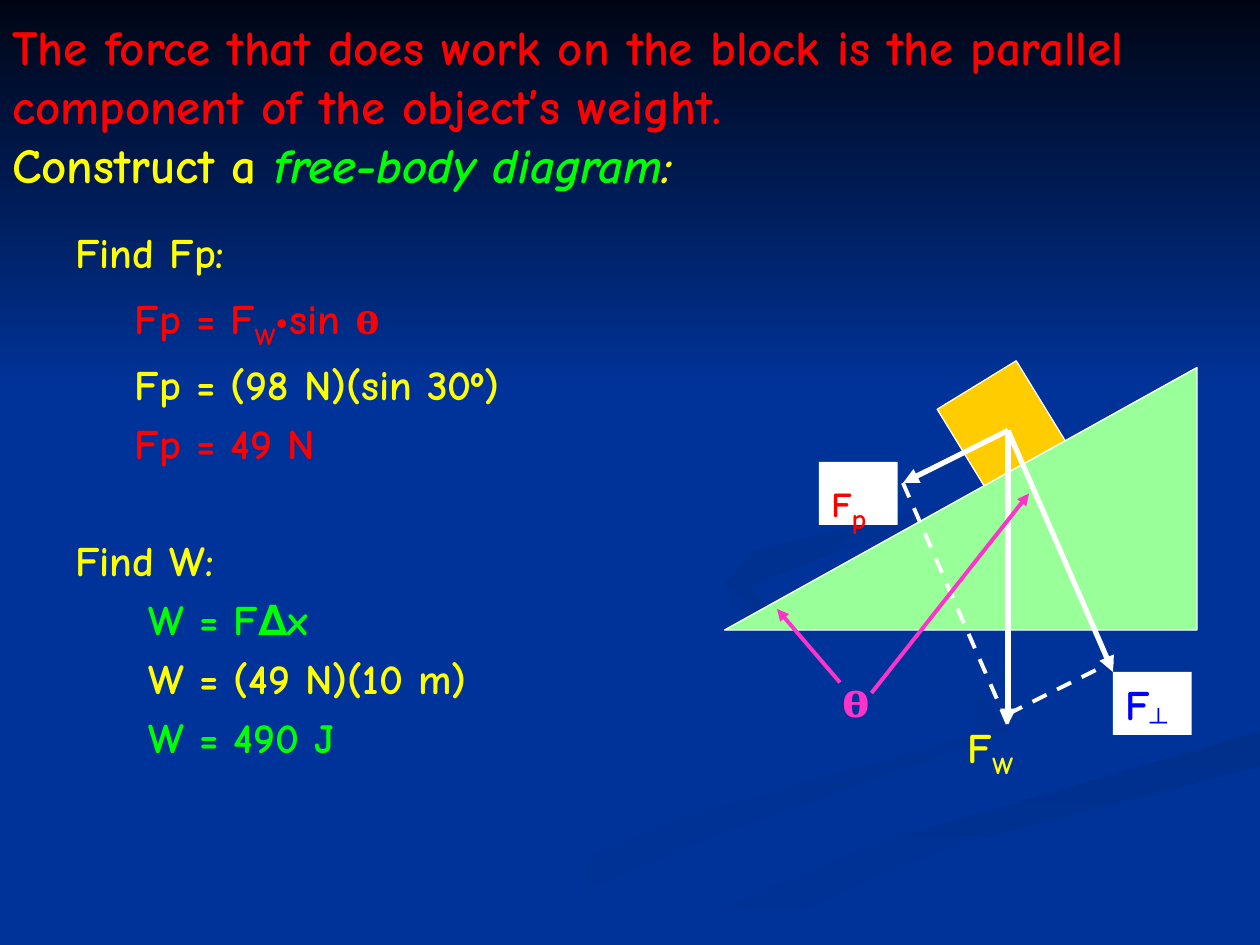
from lxml import etree
from pptx import Presentation
from pptx.dml.color import RGBColor
from pptx.enum.dml import MSO_LINE
from pptx.enum.shapes import MSO_CONNECTOR, MSO_SHAPE
from pptx.enum.text import MSO_ANCHOR
from pptx.oxml.ns import qn
from pptx.util import Pt

RECT, TRI = MSO_SHAPE.RECTANGLE, MSO_SHAPE.RIGHT_TRIANGLE
LINE, DASH = MSO_CONNECTOR.STRAIGHT, MSO_LINE.DASH
TOP, MID = MSO_ANCHOR.TOP, MSO_ANCHOR.MIDDLE
COMIC, TIMES, ARIAL = "Comic Neue", "Times New Roman", "Arial"
WIDE, HIGH = 720, 540

HEX = {
    "back": "003399", "night": "000514", "shade": "003193", "deep": "002F8C",
    "red": "FF0000", "yellow": "FFFF00", "green": "00FF00", "blue": "0000FF",
    "pink": "FF33CC", "white": "FFFFFF", "gold": "FFCC00", "mint": "99FF99",
}

SWIRLS = [
    ("back", "shade", 0, [
        (562, 398), (442, 357), (414, 330), (418, 348), (559, 398), (557, 420),
        (388, 467), (216, HIGH), (260, HIGH), (406, 479), (576, 418)]),
    ("deep", "back", 90, [
        (362, HIGH), (411, HIGH), (541, 484), (WIDE, 438), (WIDE, 418),
        (501, 482)]),
    ("deep", "back", 45, [
        (492, 310), (594, 289), (640, 261), (638, 228), (549, 168), (635, 225),
        (631, 259), (549, 287), (430, 315), (415, 333), (448, 360), (428, 335)]),
]

SUB, SLANT = {"sub": True}, {"i": True}
TITLE = [
    (0, 0, 28, [("The force that does work on the block is the parallel "
                 "component of the object’s weight.", "red")]),
    (0, 0, 28, [("Construct a ", "yellow"),
                ("free-body diagram", "green", SLANT), (":", "yellow", SLANT)]),
]
STEPS = [
    (0, "Find Fp:", 34, [
        [("Fp = F", "red"), ("W", "red", SUB), ("•sin ", "red"),
         ("ө", "red", {"font": TIMES, "size": 28})],
        [("Fp = (98 N)(sin 30º)", "yellow")],
        [("Fp = 49 N", "red")]]),
    (38.5, "Find W:", 42, [
        [("W = F∆x", "green")],
        [("W = (49 N)(10 m)", "yellow")],
        [("W = 490 J", "green")]]),
]
SOLIDS = [
    (RECT, (546, 216, 53, 55), 328.5, "gold"),
    (TRI, (474, 150, 150, 270), 270, "mint"),
]
HUB, SIDE, FOOT = (576, 246), (516, 276), (576, 414)
RAYS = [
    ("white", 3, False, [(HUB, FOOT), (HUB, (636, 384)), (HUB, SIDE)]),
    ("white", 2.25, True, [(SIDE, FOOT), ((576, 408), (636, 378))]),
    ("pink", 2.25, False, [((498, 396), (588, 282)), ((480, 390), (444, 348))]),
]
CARDS = [
    ((468, 264), 20, [("F", "red"), ("p", "red", {"sub": True, "size": 28})]),
    ((636, 384), 24, [("F", "blue"), ("┴", "blue", {"sub": True, "font": ARIAL})]),
]
TAGS = [
    ((546, 409, 46, 36), 24, [("F", "yellow"), ("W", "yellow", SUB)]),
    ((474, 374.5, 30, 45), 32, [("ө", "pink", {"font": TIMES})]),
]


def rgb(name):
    return RGBColor.from_string(HEX[name])


def write(frame, paras, wrap=True, anchor=TOP):
    frame.word_wrap = wrap
    frame.vertical_anchor = anchor
    for n, (indent, gap, size, runs) in enumerate(paras):
        para = frame.add_paragraph() if n else frame.paragraphs[0]
        para.space_before = Pt(gap)
        para.font.bold = True
        props = para._p.get_or_add_pPr()
        props.set("marL", str(Pt(indent)))
        props.set("algn", "l")
        for words, color, *more in runs:
            look = more[0] if more else {}
            run = para.add_run()
            run.text = words
            font = run.font
            font.name = look.get("font", COMIC)
            font.size = Pt(look.get("size", size))
            font.bold = True
            font.color.rgb = rgb(color)
            if look.get("i"):
                font.italic = True
            if look.get("sub"):
                run._r.get_or_add_rPr().set("baseline", "-25000")


def text(slide, box, paras, **opts):
    area = slide.shapes.add_textbox(*map(Pt, box))
    write(area.text_frame, paras, **opts)


def solid(slide, kind, box, color, turn=0, edge=False):
    shape = slide.shapes.add_shape(kind, *map(Pt, box))
    shape.shadow.inherit = False
    shape.rotation = turn
    shape.fill.solid()
    shape.fill.fore_color.rgb = rgb(color)
    if edge:
        shape.line.color.rgb = rgb("white")
        shape.line.width = Pt(0.75)
    else:
        shape.line.fill.background()
    return shape


def blend(shape, first, last, angle):
    shape.fill.gradient()
    shape.fill.gradient_angle = (360 - angle) % 360
    for stop, color in zip(shape.fill.gradient_stops, (first, last)):
        stop.color.rgb = rgb(color)


def swirl(slide, first, last, angle, dots):
    pen = slide.shapes.build_freeform(*dots[0], scale=Pt(1))
    pen.add_line_segments(dots[1:], close=True)
    shape = pen.convert_to_shape()
    shape.shadow.inherit = False
    shape.line.fill.background()
    blend(shape, first, last, angle)


def ray(slide, start, end, color, width, dashed):
    link = slide.shapes.add_connector(LINE, *map(Pt, start + end))
    link.line.color.rgb = rgb(color)
    link.line.width = Pt(width)
    if dashed:
        link.line.dash_style = DASH
    else:
        tip = etree.SubElement(link.line._get_or_add_ln(), qn("a:tailEnd"))
        tip.set("type", "triangle")
    etree.SubElement(link._element.spPr, qn("a:effectLst"))


def main():
    deck = Presentation()
    deck.slide_width, deck.slide_height = Pt(WIDE), Pt(HIGH)
    slide = deck.slides.add_slide(deck.slide_layouts[6])
    slide.background.fill.solid()
    slide.background.fill.fore_color.rgb = rgb("back")
    for item in SWIRLS:
        swirl(slide, *item)
    blend(solid(slide, RECT, (0, 0, WIDE, 222), "night"), "night", "back", 90)
    text(slide, (0, 0, 703.5, 120), TITLE, anchor=MID)
    body = []
    for gap, head, indent, lines in STEPS:
        body.append((0, gap, 24, [(head, "yellow")]))
        body += [(indent, 4.8, 24, runs) for runs in lines]
    text(slide, (36, 126, 336, 356), body)
    for kind, box, turn, color in SOLIDS:
        solid(slide, kind, box, color, turn, edge=True)
    for color, width, dashed, pairs in RAYS:
        for start, end in pairs:
            ray(slide, start, end, color, width, dashed)
    for spot, size, runs in CARDS:
        card = solid(slide, RECT, spot + (45, 36), "white")
        write(card.text_frame, [(0, 0, size, runs)])
    for box, size, runs in TAGS:
        text(slide, box, [(0, 0, size, runs)], wrap=False)
    deck.save("out.pptx")


if __name__ == "__main__":
    main()
